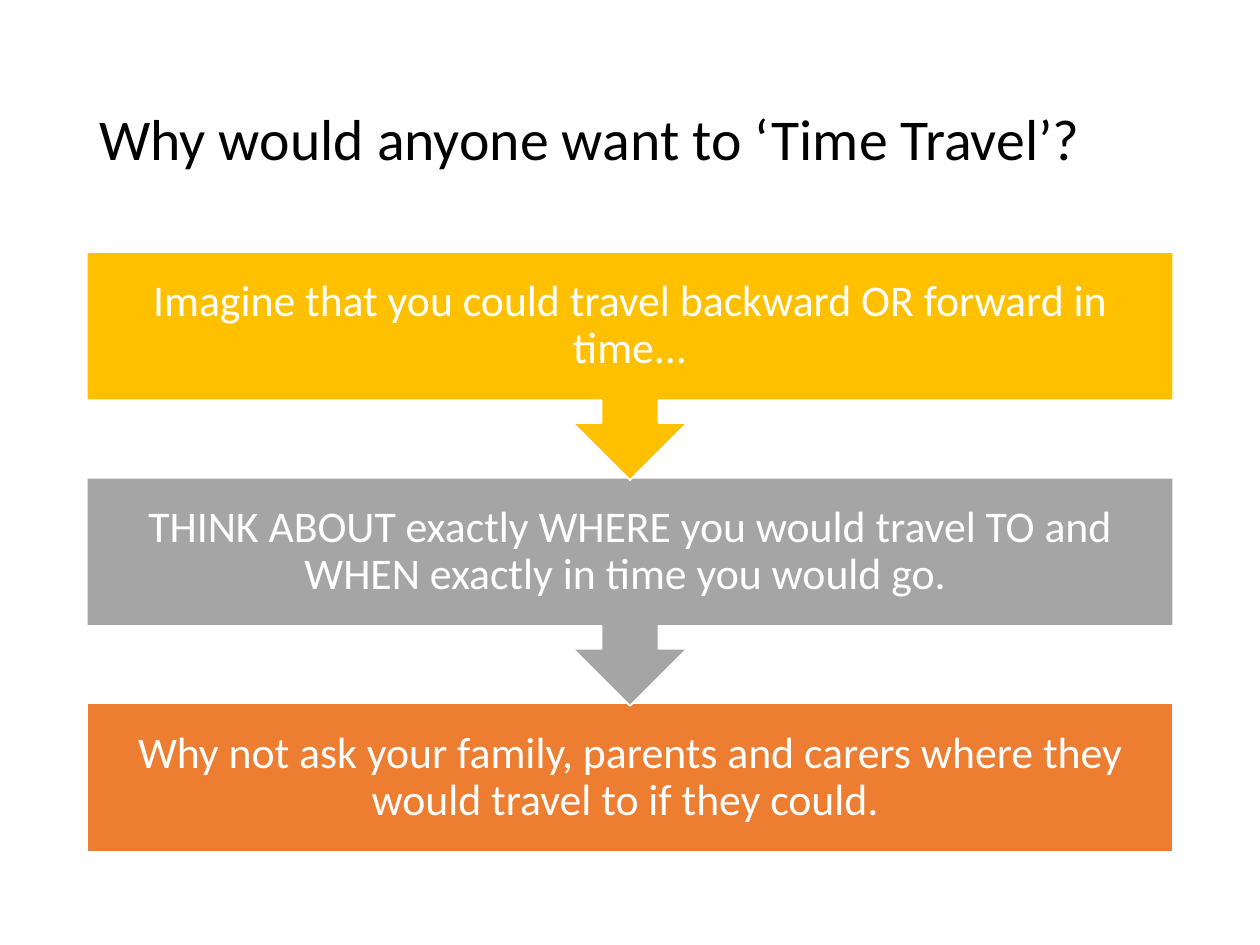
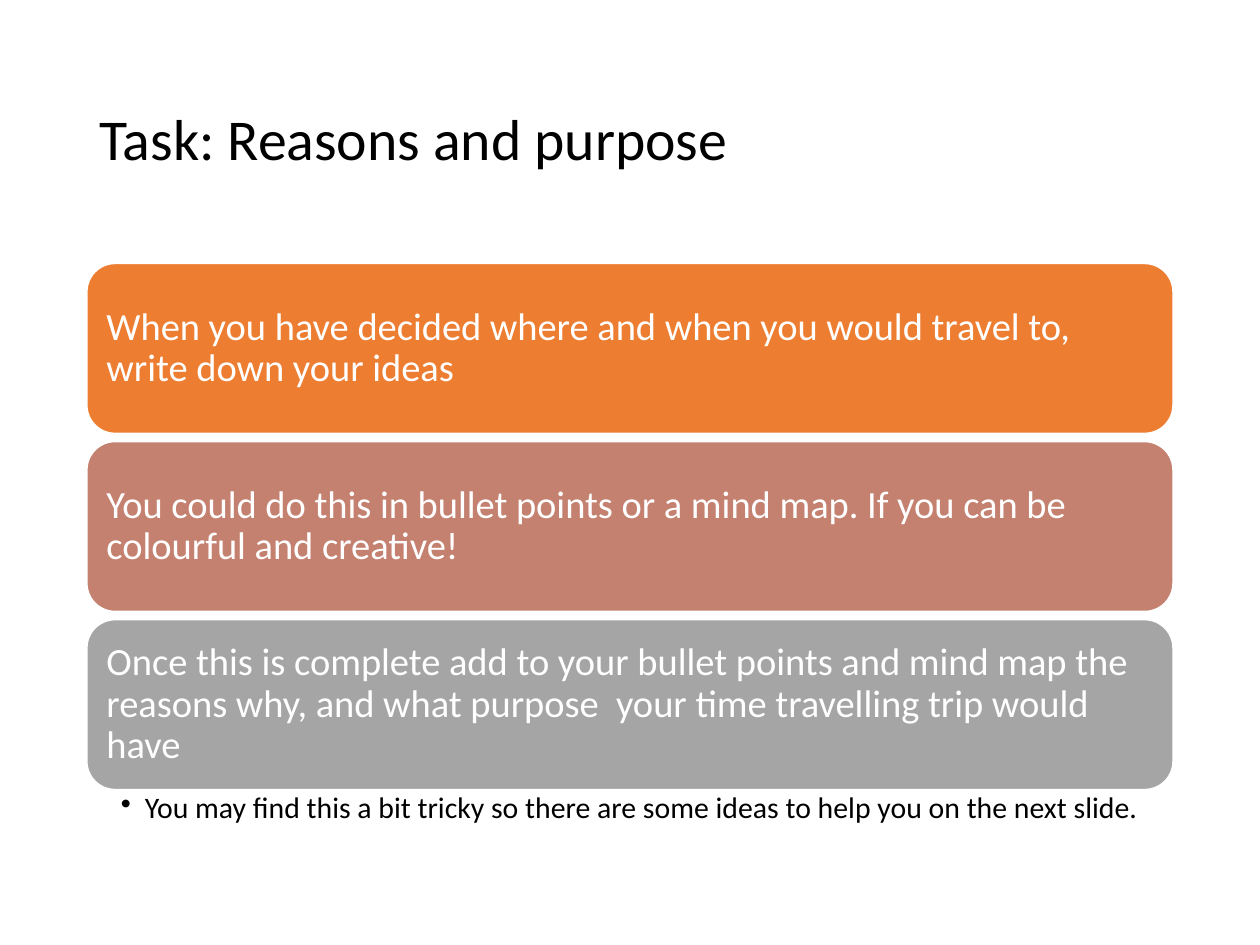
from dataclasses import dataclass

from lxml.etree import SubElement
from pptx import Presentation
from pptx.dml.color import RGBColor
from pptx.enum.shapes import MSO_SHAPE as Shape
from pptx.enum.text import MSO_ANCHOR as Anchor, MSO_AUTO_SIZE as AutoSize, PP_ALIGN as Align
from pptx.oxml.ns import qn
from pptx.util import Cm, Pt

# Shared look
FONT = "Calibri"
BLACK, WHITE = "000000", "FFFFFF"
ORANGE, ROSE, GREY, GOLD = "ED7D31", "C48170", "A5A5A5", "FFC000"
LEFT, WIDTH = Cm(1.75), Cm(21.9)


@dataclass(frozen=True)
class TextStyle:
    size: float
    color: str
    align: Align = Align.LEFT
    anchor: Anchor = Anchor.MIDDLE
    margins: tuple[float, float, float, float] = (0.25, 0.13, 0.25, 0.13)


@dataclass(frozen=True)
class Panel:
    text: str
    fill: str
    kind: Shape
    height: float


TITLE = TextStyle(33, BLACK)
STEP = TextStyle(25, WHITE, Align.CENTER, margins=(0.48,) * 4)
CARD = TextStyle(22, WHITE, margins=(0.23,) * 4)
NOTE = TextStyle(17, BLACK, anchor=Anchor.TOP, margins=(0.69, 0.08, 0.43, 0.08))

# Content
STEPS = [
    Panel("Imagine that you could travel backward OR forward in time...",
          GOLD, Shape.DOWN_ARROW_CALLOUT, 4.6),
    Panel("THINK ABOUT exactly WHERE you would travel TO and WHEN exactly in time you would go. ",
          GREY, Shape.DOWN_ARROW_CALLOUT, 4.6),
    Panel("Why not ask your family, parents and carers where they would travel to if they could. ",
          ORANGE, Shape.RECTANGLE, 3),
]
CARDS = [
    Panel(text, fill, Shape.ROUNDED_RECTANGLE, 3.43)
    for text, fill in [
        ("When you have decided where and when you would travel to, write down your ideas", ORANGE),
        ("You could do this in bullet points or a mind map. If you can be colourful and creative!",
         ROSE),
        ("Once this is complete add to your bullet points and mind map the reasons why, "
         "and what purpose  your time travelling trip would have", GREY),
    ]
]
NOTE_TEXT = "You may find this a bit tricky so there are some ideas to help you on the next slide."


def rgb(color: str) -> RGBColor:
    return RGBColor.from_string(color)


def set_attributes(target, values: dict) -> None:
    for name, value in values.items():
        setattr(target, name, value)


def write_text(shape, text: str, style: TextStyle):
    """Fill a shape with one styled paragraph and return the paragraph."""
    frame = shape.text_frame
    frame.text = text
    left, top, right, bottom = map(Cm, style.margins)
    set_attributes(frame, {
        "word_wrap": True, "auto_size": AutoSize.NONE, "vertical_anchor": style.anchor,
        "margin_left": left, "margin_top": top, "margin_right": right, "margin_bottom": bottom,
    })
    paragraph = frame.paragraphs[0]
    set_attributes(paragraph, {"alignment": style.align, "line_spacing": 0.9})
    font = paragraph.runs[0].font
    set_attributes(font, {"name": FONT, "size": Pt(style.size)})
    font.color.rgb = rgb(style.color)
    return paragraph


def add_titled_slide(presentation, title: str):
    slide = presentation.slides.add_slide(presentation.slide_layouts[5])
    placeholder = slide.shapes.title
    set_attributes(placeholder, {
        "left": LEFT, "top": Cm(1.02), "width": WIDTH, "height": Cm(3.68),
    })
    write_text(placeholder, title, TITLE)
    return slide


def add_panels(slide, panels: list[Panel], top: float, pitch: float, style: TextStyle) -> None:
    """Stack panels at equal steps, the lowest at the back."""
    for index, panel in reversed(list(enumerate(panels))):
        shape = slide.shapes.add_shape(
            panel.kind, LEFT, Cm(top + index * pitch), WIDTH, Cm(panel.height))
        shape.shadow.inherit = False
        shape.fill.solid()
        shape.fill.fore_color.rgb = rgb(panel.fill)
        shape.line.color.rgb = rgb(WHITE)
        shape.line.width = Pt(1)
        write_text(shape, panel.text, style)


def add_bullet_note(slide, text: str, top: float) -> None:
    box = slide.shapes.add_textbox(LEFT, Cm(top), WIDTH, Cm(1.02))
    properties = write_text(box, text, NOTE)._p.get_or_add_pPr()
    indent = Cm(0.48)
    properties.set("marL", str(indent))
    properties.set("indent", str(-indent))
    SubElement(properties, qn("a:buChar"), char="•")


def main() -> None:
    presentation = Presentation()
    set_attributes(presentation, {"slide_width": Cm(25.4), "slide_height": Cm(19.05)})

    # Slide 1: chain of steps
    slide = add_titled_slide(presentation, "Why would anyone want to ‘Time Travel’?")
    add_panels(slide, STEPS, 5.08, 4.55, STEP)

    # Slide 2: task cards with a closing note
    slide = add_titled_slide(presentation, "Task: Reasons and purpose")
    add_panels(slide, CARDS, 5.31, 3.59, CARD)
    add_bullet_note(slide, NOTE_TEXT, 15.9)

    presentation.save("out.pptx")


if __name__ == "__main__":
    main()
